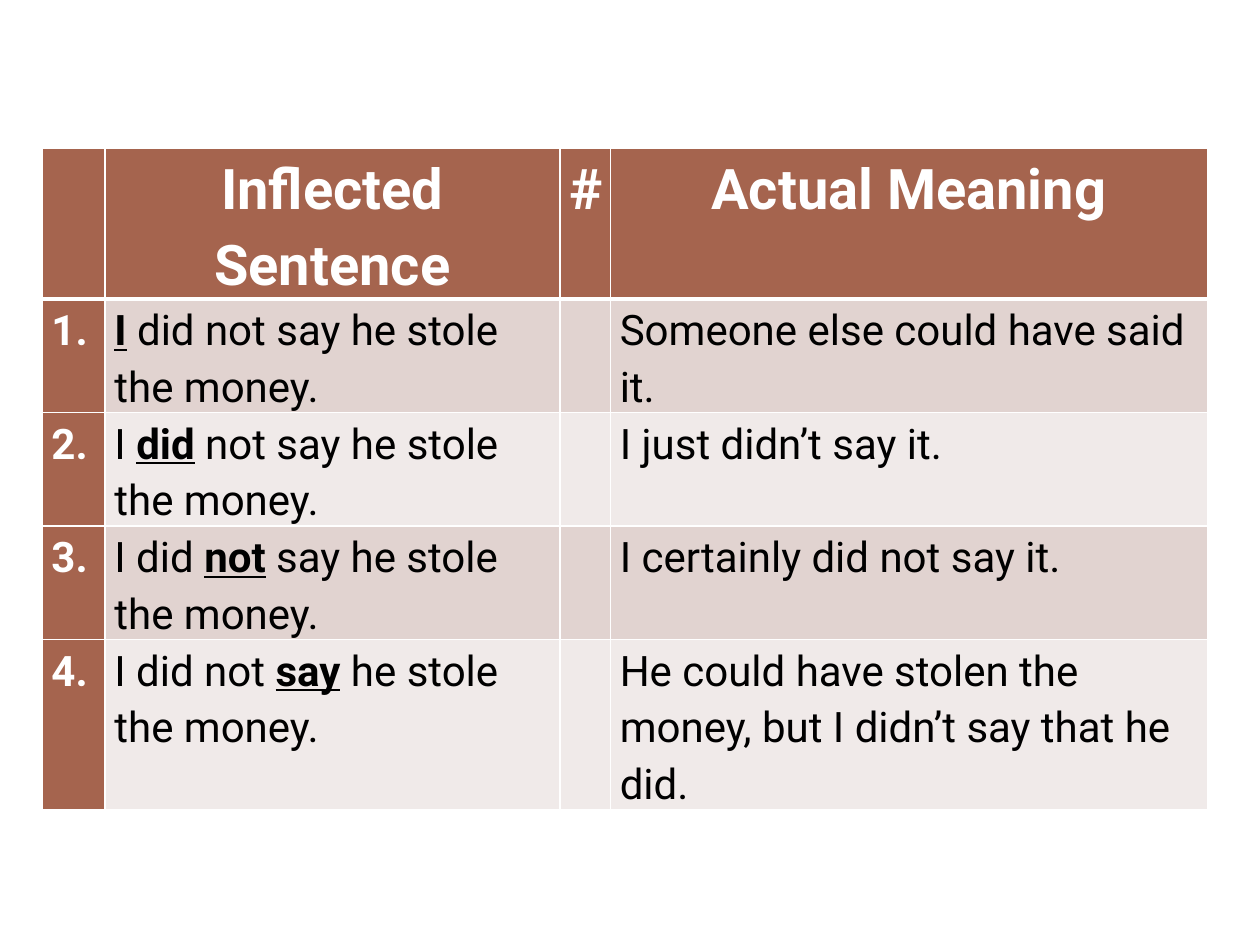
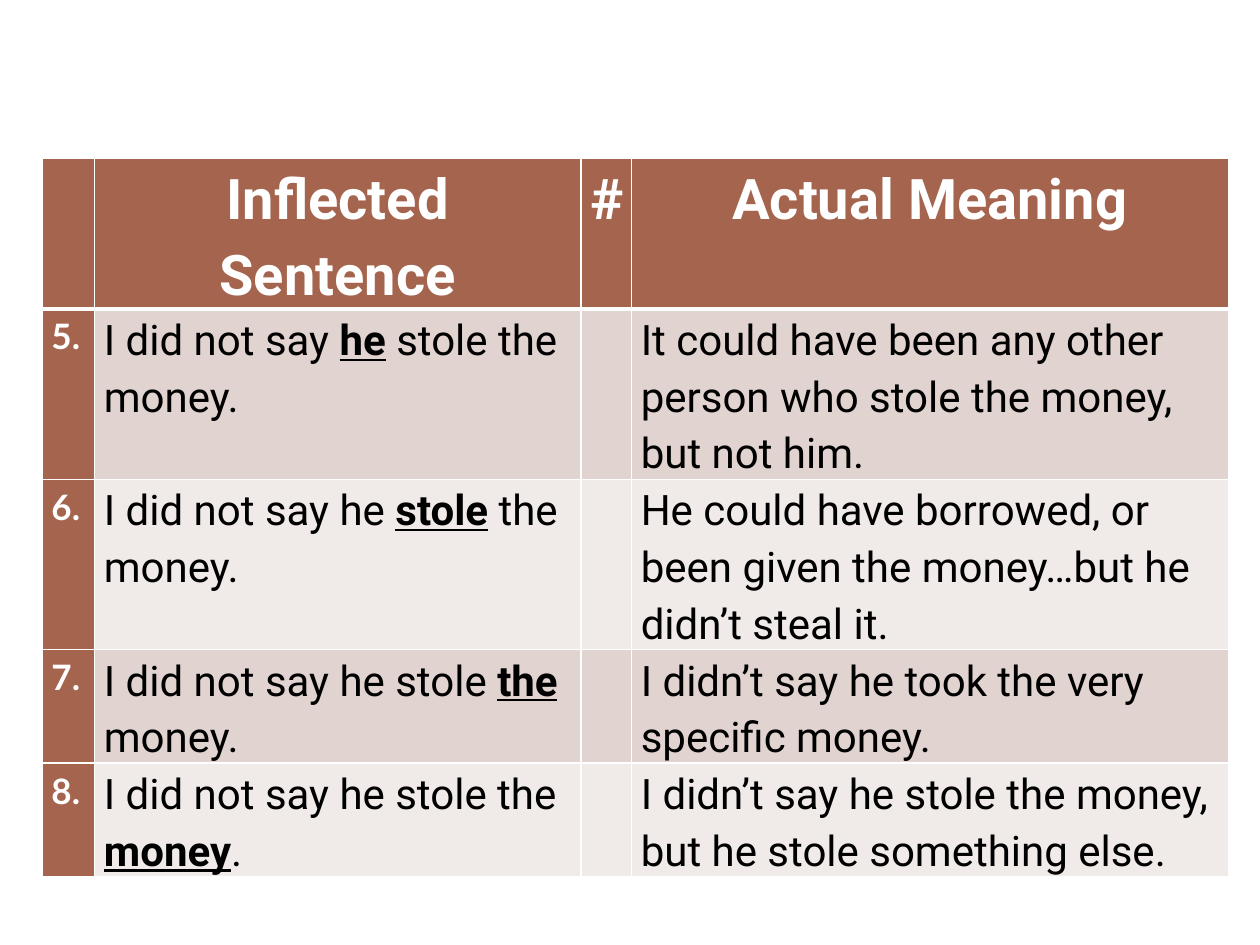
"""Build two slides of tables showing how stressing one word changes a sentence."""
from lxml.etree import SubElement
from pptx import Presentation
from pptx.dml.color import RGBColor
from pptx.enum.text import PP_ALIGN
from pptx.oxml.ns import qn
from pptx.util import Pt

WORDS = ("I", "did", "not", "say", "he", "stole", "the", "money")
HEADINGS = ("", "Inflected Sentence", "#", "Actual Meaning")
SLIDES = [
    {
        "top": 84.5, "widths": (36, 260, 28.8, 341.2),
        "label_font": ("Roboto", 24), "first": 1,
        "meanings": [
            ("Someone else could have said it.", 2),
            ("I just didn’t say it.", 2),
            ("I certainly did not say it.", 2),
            ("He could have stolen the money, but I didn’t say that he did.", 3),
        ],
    },
    {
        "top": 90.2, "widths": (30, 278, 28.8, 341.2),
        "label_font": ("Lato", 20), "first": 5,
        "meanings": [
            ("It could have been any other person who stole the money, but not him.", 3),
            ("He could have borrowed, or been given the money…but he didn’t steal it.", 3),
            ("I didn’t say he took the very specific money.", 2),
            ("I didn’t say he stole the money, but he stole something else.", 2),
        ],
    },
]

LEFT = 24
HEADER_HEIGHT = 85.5
LINE_HEIGHT = 32.3
BODY_FONT = ("Roboto", 24)
HEADER_FONT = ("Roboto", 32)
BROWN = RGBColor(0xA5, 0x64, 0x4E)
BANDS = (RGBColor(0xE1, 0xD3, 0xD0), RGBColor(0xF0, 0xEA, 0xE9))
WHITE = RGBColor(0xFF, 0xFF, 0xFF)
BLACK = RGBColor(0, 0, 0)


def style_cell(cell, color, top=1, bottom=1):
    """Give a cell its margins, white borders and fill."""
    cell.margin_left = cell.margin_right = Pt(5.4)
    cell.margin_top = cell.margin_bottom = 0
    properties = cell._tc.get_or_add_tcPr()
    for side, weight in (("L", 1), ("R", 1), ("T", top), ("B", bottom)):
        line = SubElement(properties, qn(f"a:ln{side}"), w=str(Pt(weight)))
        solid = SubElement(line, qn("a:solidFill"))
        SubElement(solid, qn("a:srgbClr"), val=str(WHITE))
    cell.fill.solid()
    cell.fill.fore_color.rgb = color


def write(cell, parts, font, color, bold=False, align=PP_ALIGN.LEFT):
    """Write text parts in one paragraph, stressing the second part."""
    para = cell.text_frame.paragraphs[0]
    para.alignment = align
    para.line_spacing = 1.15
    para.font.name, para.font.size = font[0], Pt(font[1])
    para.font.bold = bold
    para.font.color.rgb = color
    for index, text in enumerate(parts):
        if text:
            span = para.add_run()
            span.text = text
            if index == 1:
                span.font.bold = span.font.underline = True


def stressed_sentence(number):
    """Split the sentence around its numbered word."""
    before = "".join(word + " " for word in WORDS[:number - 1])
    after = "".join(" " + word for word in WORDS[number:]) + "."
    return before, WORDS[number - 1], after


def add_meaning_table(page, content):
    """Add one table of stressed sentences and their meanings."""
    meanings, widths = content["meanings"], content["widths"]
    heights = [HEADER_HEIGHT] + [lines * LINE_HEIGHT for _, lines in meanings]
    table = page.shapes.add_table(
        len(heights), len(widths), Pt(LEFT), Pt(content["top"]),
        Pt(sum(widths)), Pt(sum(heights))).table
    for column, width in zip(table.columns, widths):
        column.width = Pt(width)
    for row, height in zip(table.rows, heights):
        row.height = Pt(height)

    for column, heading in enumerate(HEADINGS):
        cell = table.cell(0, column)
        style_cell(cell, BROWN, bottom=3)
        if heading:
            align = PP_ALIGN.LEFT if heading == "#" else PP_ALIGN.CENTER
            write(cell, [heading], HEADER_FONT, WHITE, True, align)

    for row, (meaning, _) in enumerate(meanings, 1):
        number = content["first"] + row - 1
        for column in range(len(widths)):
            color = BANDS[(row - 1) % 2] if column else BROWN
            style_cell(table.cell(row, column), color, top=3 if row == 1 else 1)
        write(table.cell(row, 0), [f"{number}."], content["label_font"], WHITE, True)
        write(table.cell(row, 1), stressed_sentence(number), BODY_FONT, BLACK)
        write(table.cell(row, 3), [meaning], BODY_FONT, BLACK)


def main():
    """Build and save the deck."""
    deck = Presentation()
    deck.slide_width, deck.slide_height = Pt(720), Pt(540)
    for content in SLIDES:
        page = deck.slides.add_slide(deck.slide_layouts[6])
        add_meaning_table(page, content)
    deck.save("out.pptx")


if __name__ == "__main__":
    main()
